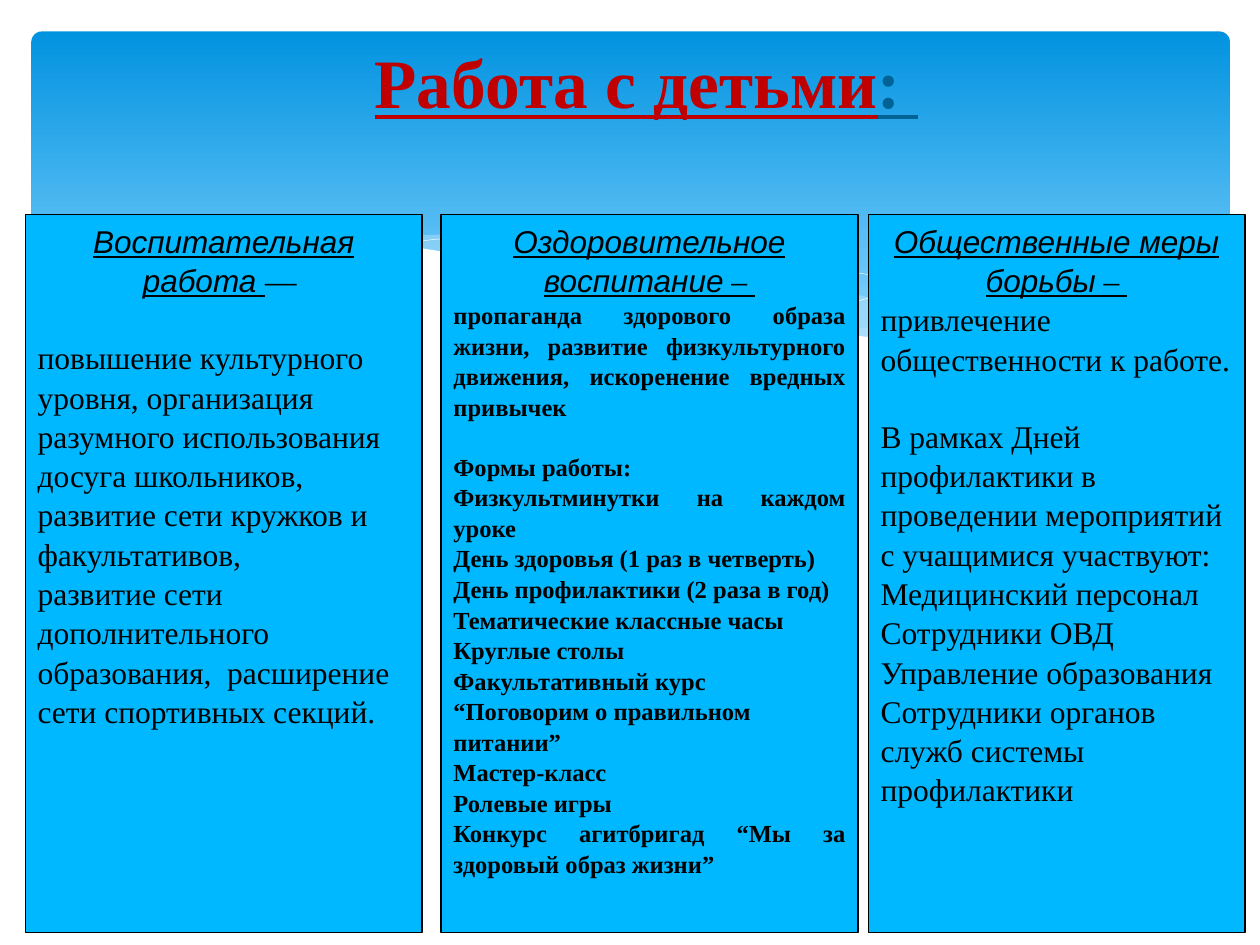
import pptx
import pptx.dml.color
import pptx.enum.shapes
import pptx.enum.text
import pptx.oxml
import pptx.oxml.ns
import pptx.util

CELL = pptx.util.Inches(0.1)  # the slide is 100 columns by 75 rows
SERIF, SANS = "Times New Roman", "Arial"
LINE_SPACING = 1.04
ALIGN = pptx.enum.text.PP_ALIGN
SHAPES = pptx.enum.shapes.MSO_SHAPE

BACKDROP_BOX = (2.5, 2.5, 95.1, 27)
WAVES_BOX = (2.3, 18.4, 95.4, 14.5)
TITLE_BOX = (6.7, 2.5, 89.2, 6.7)

# Wave points are in cells from the corner of WAVES_BOX
RIGHT_WAVE = [(95.2, 1.6), (88.3, 2.9), (83.8, 3.9), (75.6, 5.8), (63.8, 8.1), (69.6, 8.8),
              (75.8, 9.3), (81.2, 9.3), (86.6, 8.8), (91.2, 7.8), (95.2, 6.3)]
MIDDLE_WAVE = [(87, 8.9), (78.4, 7.6), (68.3, 5.6), (60.6, 3.8), (54.6, 2.4), (49.1, 1.4),
               (41.9, 0.5), (35.7, 0.1), (30.5, 0.3), (26.3, 0.7), (31.9, 1.5), (38.1, 2.7),
               (46.8, 4.8), (56.1, 6.8), (64.2, 8.2), (71.3, 9.1), (78.4, 9.4), (83.4, 9.3)]
FALLING_LINE = [(28.6, 1.1), (32.1, 0.6), (37.8, 0.3), (44.6, 0.5), (51, 1), (58.5, 2),
                (67.2, 3.5), (77.2, 5.7), (88.4, 8.8)]
RISING_LINE = [(59, 7.3), (67.2, 5.1), (75.3, 3.2), (84.3, 1.5), (90.1, 0.6), (95.2, 0.1)]
WHITE_WAVE = [(95.4, 6.2), (90.7, 7.8), (85.2, 8.9), (78.6, 9.3), (72.1, 9), (64.5, 8.1),
              (55.6, 6.6), (48, 4.9), (42.4, 3.6), (34.2, 1.8), (26.9, 0.6), (20.7, 0.1),
              (15.4, 0), (9.6, 0.3), (5.3, 1.1), (2.3, 1.9), (0, 2.9), (0, 14.5), (95.4, 14.5)]

# Each body paragraph: text, alignment, whether a gap of one line precedes it
COLUMNS = [
    {"box": (2, 17, 31.5, 57), "heading": "Воспитательная работа ", "dash": "— ",
     "dash_underline": False, "size": 18, "bold": False, "body": [
         ("повышение культурного уровня, организация разумного использования досуга "
          "школьников, развитие сети кружков и факультативов,", ALIGN.LEFT, True),
         ("развитие сети дополнительного образования,  расширение сети спортивных секций.",
          ALIGN.LEFT, False)]},
    {"box": (35, 17, 33.1, 57), "heading": "Оздоровительное воспитание", "dash": " – ",
     "dash_underline": True, "size": 14, "bold": True, "body": [
         ("пропаганда здорового образа жизни, развитие физкультурного движения, "
          "искоренение вредных привычек", ALIGN.JUSTIFY, False),
         ("Формы работы:", ALIGN.JUSTIFY, True),
         ("Физкультминутки на каждом уроке", ALIGN.JUSTIFY, False),
         ("День здоровья (1 раз в четверть)", ALIGN.JUSTIFY, False),
         ("День профилактики (2 раза в год)", ALIGN.JUSTIFY, False),
         ("Тематические классные часы", ALIGN.JUSTIFY, False),
         ("Круглые столы", ALIGN.JUSTIFY, False),
         ("Факультативный курс “Поговорим о правильном питании”", ALIGN.LEFT, False),
         ("Мастер-класс", ALIGN.JUSTIFY, False),
         ("Ролевые игры", ALIGN.JUSTIFY, False),
         ("Конкурс агитбригад “Мы за здоровый образ жизни”", ALIGN.JUSTIFY, False)]},
    {"box": (68.9, 17, 29.9, 57), "heading": "Общественные меры борьбы", "dash": " – ",
     "dash_underline": True, "size": 18, "bold": False, "body": [
         ("привлечение общественности к работе.", ALIGN.LEFT, False),
         ("В рамках Дней профилактики в проведении мероприятий с учащимися участвуют:",
          ALIGN.LEFT, True),
         ("Медицинский персонал", ALIGN.LEFT, False),
         ("Сотрудники ОВД", ALIGN.LEFT, False),
         ("Управление образования", ALIGN.LEFT, False),
         ("Сотрудники органов служб системы профилактики", ALIGN.LEFT, False)]},
]


def color(hex_string):
    return pptx.dml.color.RGBColor.from_string(hex_string)


def cells(values):
    return [round(value * CELL) for value in values]


def set_font(font, name, size, hex_string, bold=False):
    font.name, font.size, font.bold = name, pptx.util.Pt(size), bold
    font.color.rgb = color(hex_string)


def add_run(paragraph, text):
    run = paragraph.add_run()
    run.text = text
    return run.font


def add_backdrop(slide, box):
    shape = slide.shapes.add_shape(SHAPES.ROUNDED_RECTANGLE, *cells(box))
    shape.adjustments[0] = 0.03
    shape.shadow.inherit = False
    shape.line.fill.background()
    shape.fill.gradient()
    shape.fill.gradient_angle = 270
    for stop, position, hex_string in zip(shape.fill.gradient_stops, (0, 0.9),
                                          ("0293E0", "83D3FE")):
        stop.position = position
        stop.color.rgb = color(hex_string)


def add_curve(slide, box, points, fill=None, opacity=100):
    """Draw a filled outline, or an open white line when no fill is given."""
    start, *rest = [cells(point) for point in points]
    builder = slide.shapes.build_freeform(*start)
    builder.add_line_segments(rest, close=fill is not None)
    shape = builder.convert_to_shape(*cells(box[:2]))
    shape.shadow.inherit = False
    if fill is None:
        shape.fill.background()
        shape.line.color.rgb = color("FFFFFF")
        shape.line.width = pptx.util.Pt(0.25)
        return
    shape.line.fill.background()
    shape.fill.solid()
    shape.fill.fore_color.rgb = color(fill)
    if opacity < 100:
        color_element = shape.fill._xPr.find(".//" + pptx.oxml.ns.qn("a:srgbClr"))
        alpha = pptx.oxml.parse_xml(
            f'<a:alpha {pptx.oxml.ns.nsdecls("a")} val="{opacity * 1000}"/>')
        color_element.append(alpha)


def add_waves(slide, box):
    add_curve(slide, box, RIGHT_WAVE, "C6E7FC", 29)
    add_curve(slide, box, MIDDLE_WAVE, "C6E7FC", 40)
    add_curve(slide, box, FALLING_LINE)
    add_curve(slide, box, RISING_LINE)
    add_curve(slide, box, WHITE_WAVE, "FFFFFF")


def add_title(slide, box):
    frame = slide.shapes.add_textbox(*cells(box)).text_frame
    frame.word_wrap = True
    frame.vertical_anchor = pptx.enum.text.MSO_ANCHOR.MIDDLE
    frame.margin_top, frame.margin_bottom = cells((1.2, 0))
    paragraph = frame.paragraphs[0]
    paragraph.alignment = ALIGN.CENTER
    for text, hex_string in (("Работа с детьми", "C00000"), (": ", "016296")):
        font = add_run(paragraph, text)
        set_font(font, SERIF, 39.6, hex_string, bold=True)
        font.underline = True


def add_column(slide, box, heading, dash, dash_underline, size, bold, body):
    shape = slide.shapes.add_shape(SHAPES.RECTANGLE, *cells(box))
    shape.shadow.inherit = False
    shape.fill.solid()
    shape.fill.fore_color.rgb = color("00B8FF")
    shape.line.color.rgb = color("000000")
    shape.line.width = pptx.util.Pt(0.75)
    frame = shape.text_frame
    frame.word_wrap = True
    frame.vertical_anchor = pptx.enum.text.MSO_ANCHOR.TOP

    paragraph = frame.paragraphs[0]
    paragraph.alignment = ALIGN.CENTER
    paragraph.line_spacing = LINE_SPACING
    heading_font = add_run(paragraph, heading)
    set_font(heading_font, SANS, 18, "000000")
    heading_font.italic = heading_font.underline = True
    dash_font = add_run(paragraph, dash)
    set_font(dash_font, SERIF, 18, "000000")
    dash_font.underline = dash_underline

    for text, alignment, gap in body:
        paragraph = frame.add_paragraph()
        paragraph.text = text
        paragraph.alignment = alignment
        paragraph.line_spacing = LINE_SPACING
        paragraph.space_before = pptx.util.Pt(1.2 * size if gap else 0)
        set_font(paragraph.font, SERIF, size, "000000", bold)


def main():
    presentation = pptx.Presentation()
    presentation.slide_width, presentation.slide_height = cells((100, 75))
    slide = presentation.slides.add_slide(presentation.slide_layouts[6])
    add_backdrop(slide, BACKDROP_BOX)
    add_waves(slide, WAVES_BOX)
    add_title(slide, TITLE_BOX)
    for column in COLUMNS:
        add_column(slide, **column)
    presentation.save("out.pptx")


if __name__ == "__main__":
    main()
